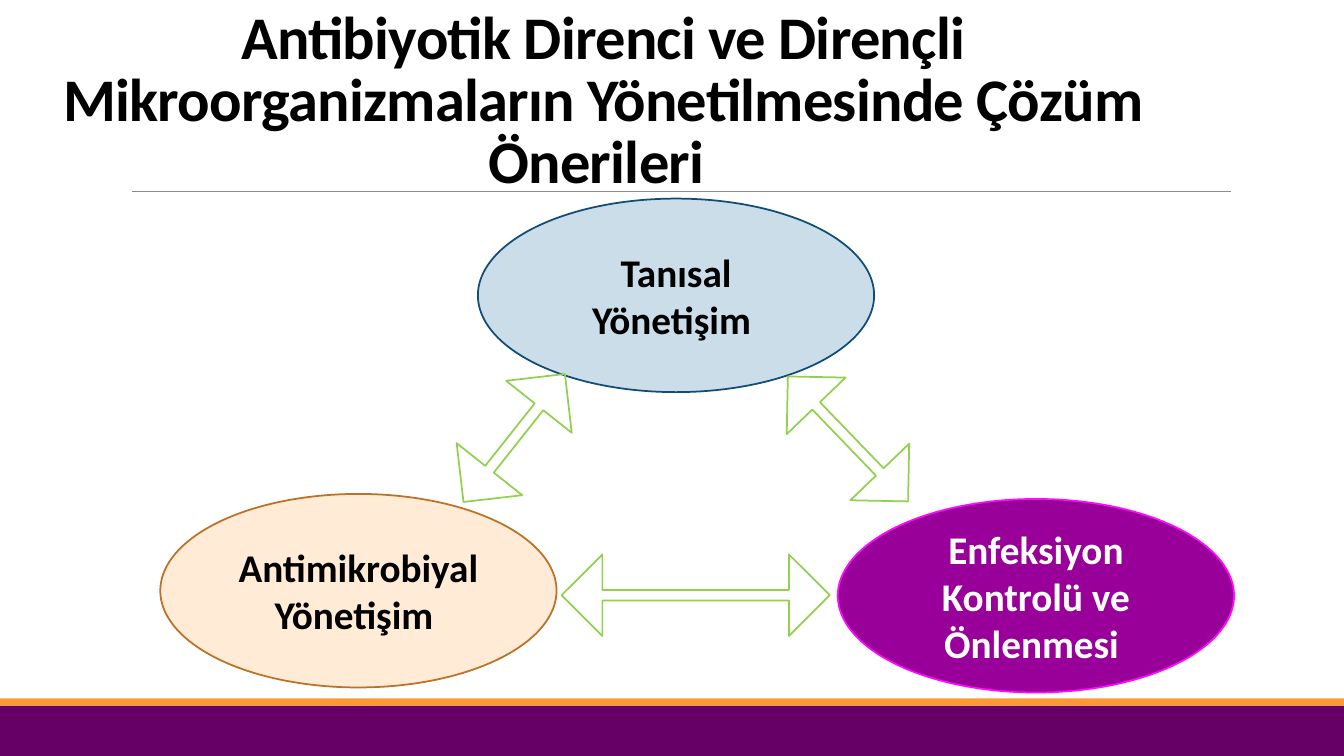
"""Build the slide on solutions for managing antibiotic resistance."""
from lxml.etree import SubElement
from pptx import Presentation
from pptx.dml.color import RGBColor
from pptx.enum.shapes import MSO_CONNECTOR, MSO_SHAPE
from pptx.enum.text import MSO_ANCHOR, PP_ALIGN
from pptx.oxml.ns import qn
from pptx.util import Inches, Pt

BLACK = RGBColor(0x00, 0x00, 0x00)
WHITE = RGBColor(0xFF, 0xFF, 0xFF)
PURPLE = RGBColor(0x66, 0x00, 0x66)
ORANGE = RGBColor(0xFF, 0x99, 0x33)
GRAY = RGBColor(0x8C, 0x8C, 0x8C)
GREEN = RGBColor(0x92, 0xD0, 0x50)
PEACH = RGBColor(0xFF, 0xEB, 0xD6)
BROWN = RGBColor(0xBD, 0x71, 0x26)
VIOLET = RGBColor(0x99, 0x00, 0x99)
PINK = RGBColor(0xFF, 0x0A, 0xFF)
PALE = RGBColor(0xCC, 0xDD, 0xEA)
NAVY = RGBColor(0x0F, 0x4C, 0x76)

deck = Presentation()
deck.slide_width, deck.slide_height = Inches(13.33), Inches(7.5)
slide = deck.slides.add_slide(deck.slide_layouts[6])
shapes = slide.shapes


def write(shape, text, size=28, color=BLACK, anchor=MSO_ANCHOR.MIDDLE, leading=None, track=0):
    frame = shape.text_frame
    frame.word_wrap = True
    frame.vertical_anchor = anchor
    para = frame.paragraphs[0]
    para.alignment = PP_ALIGN.CENTER
    para.line_spacing = leading
    run = para.add_run()
    run.text = text
    font = run.font
    font.name, font.size, font.bold = "Calibri", Pt(size), True
    font.color.rgb = color
    if track:
        run._r.get_or_add_rPr().set("spc", str(track))


def draw(kind, box, fill=None, line=None):
    shape = shapes.add_shape(kind, *map(Inches, box))
    shape.shadow.inherit = False
    if fill is None:
        shape.fill.background()
    else:
        shape.fill.solid()
        shape.fill.fore_color.rgb = fill
    if line is None:
        shape.line.fill.background()
    else:
        shape.line.color.rgb = line
        shape.line.width = Pt(1.25)
    return shape


draw(MSO_SHAPE.RECTANGLE, (0, 7, 13.33, 0.5), PURPLE)
draw(MSO_SHAPE.RECTANGLE, (0, 6.93, 13.33, 0.07), ORANGE)

rule = shapes.add_connector(
    MSO_CONNECTOR.STRAIGHT, Inches(1.31), Inches(1.9), Inches(12.21), Inches(1.9))
rule.line.color.rgb = GRAY
rule.line.width = Pt(0.5)
SubElement(rule._element.spPr, qn("a:effectLst"))

title = shapes.add_textbox(Inches(0.01), Inches(0.4), Inches(11.94), Inches(1.59))
write(title, "Antibiyotik Direnci ve Dirençli Mikroorganizmaların Yönetilmesinde Çözüm Önerileri ",
      size=43.2, anchor=MSO_ANCHOR.BOTTOM, leading=0.85, track=-50)

topics = [
    ("Antimikrobiyal Yönetişim ", 1.59, 4.9, PEACH, BROWN, BLACK),
    ("Enfeksiyon Kontrolü ve Önlenmesi ", 8.31, 4.95, VIOLET, PINK, WHITE),
    ("Tanısal Yönetişim ", 4.74, 1.97, PALE, NAVY, BLACK),
]
for text, left, top, fill, line, color in topics:
    oval = draw(MSO_SHAPE.OVAL, (left, top, 3.93, 1.92), fill, line)
    write(oval, text, color=color)

arrows = [
    ((4.29, 3.93, 1.62, 0.83), 128.4),
    ((7.55, 3.95, 1.72, 0.81), 46.1),
    ((5.57, 5.5, 2.66, 0.81), 0),
]
for box, angle in arrows:
    arrow = draw(MSO_SHAPE.LEFT_RIGHT_ARROW, box, line=GREEN)
    arrow.rotation = angle
    arrow.adjustments[0] = 0.13
    arrow.adjustments[1] = 0.5

deck.save("out.pptx")
